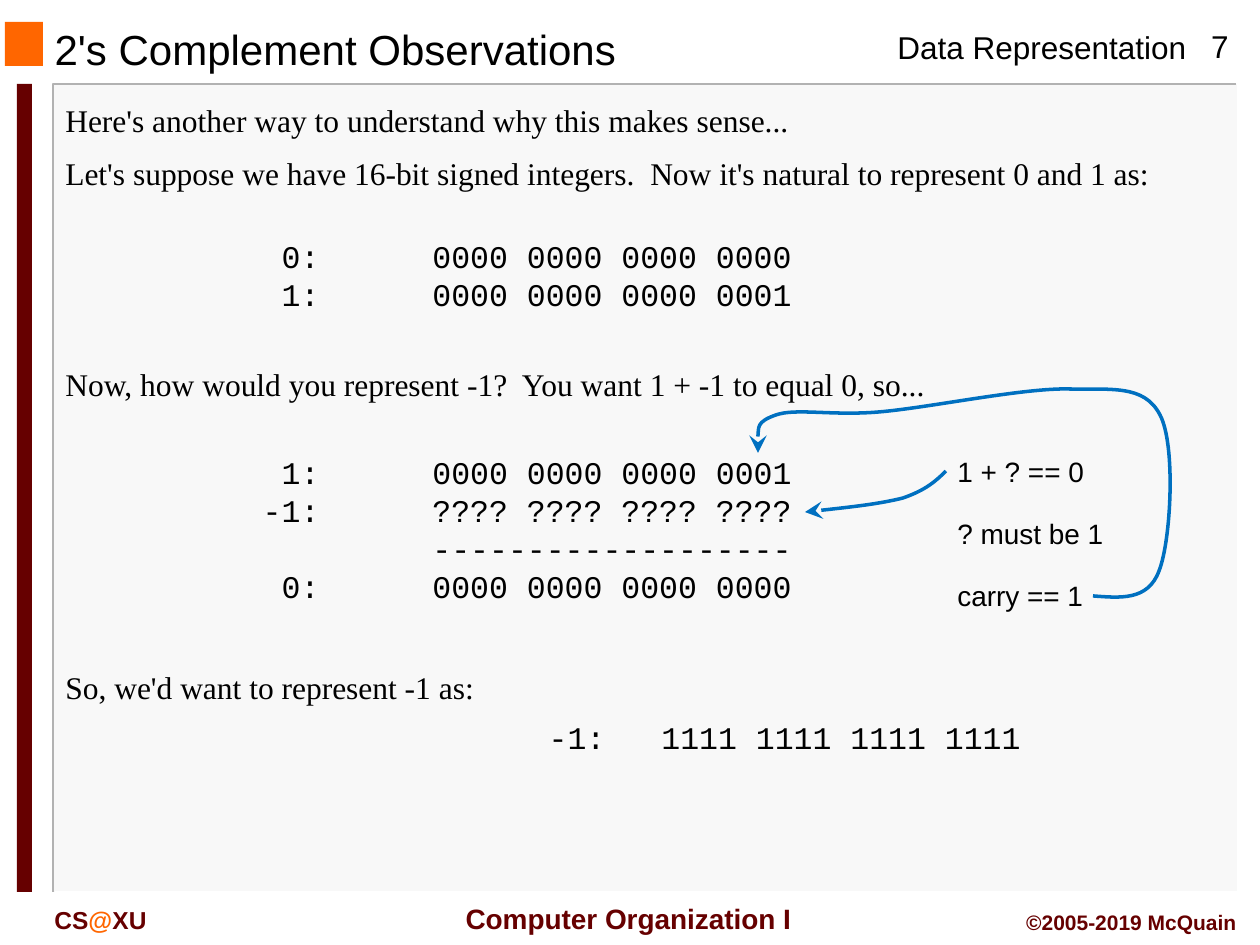
from lxml.etree import SubElement
from pptx import Presentation
from pptx.dml.color import RGBColor
from pptx.enum.shapes import MSO_SHAPE
from pptx.enum.text import MSO_ANCHOR, PP_ALIGN
from pptx.oxml.ns import qn
from pptx.util import Pt

PX = 914400 / 126
BLACK = RGBColor(0, 0, 0)
MAROON = RGBColor(0x66, 0, 0)
ORANGE = RGBColor(0xFF, 0x66, 0)
PANEL = RGBColor(0xF8, 0xF8, 0xF8)
GREY = RGBColor(0xB2, 0xB2, 0xB2)
WHITE = RGBColor(0xFF, 0xFF, 0xFF)
BLUE = RGBColor(0, 0x70, 0xC0)
LEFT, CENTER, RIGHT = PP_ALIGN.LEFT, PP_ALIGN.CENTER, PP_ALIGN.RIGHT

TITLE = "2's Complement Observations"
BLOCKS = [
    ((54, 84, 1184, 808), PANEL),
    ((5, 22, 38, 44), ORANGE),
    ((17, 84, 15, 808), MAROON),
]
EDGES = [
    ([(1236, 84), (53, 84), (53, 892)], GREY),
    ([(1238, 84), (1238, 892), (55, 892)], WHITE),
]
FRAME = [
    ((885, 22, 318, 51), [("Data Representation", BLACK)], 18, False, LEFT),
    ((1178, 21, 84, 51), [("7", BLACK)], 18, False, CENTER),
    ((445, 895, 367, 46), [("Computer Organization I", MAROON)], 16, True, CENTER),
    ((42, 899, 189, 42), [("CS", MAROON), ("@", ORANGE), ("XU", MAROON)], 14, True, LEFT),
    ((987, 903, 262, 38), [("©2005-2019 McQuain", MAROON)], 12, True, RIGHT),
]
PROSE = [
    (95, ["Here's another way to understand why this makes sense...",
          "Let's suppose we have 16-bit signed integers.  Now it's natural to represent 0 and 1 as:"]),
    (359, ["Now, how would you represent -1?  You want 1 + -1 to equal 0, so..."]),
    (662, ["So, we'd want to represent -1 as:"]),
]
SUMS = [
    ((231, 231, 735, 88), 76, 189, [
        ("0:", "0000 0000 0000 0000"),
        ("1:", "0000 0000 0000 0001")]),
    ((231, 447, 735, 165), 76, 189, [
        ("1:", "0000 0000 0000 0001"),
        ("-1:", "???? ???? ???? ????"),
        ("", "-------------------"),
        ("0:", "0000 0000 0000 0000")]),
    ((536, 712, 514, 51), 57, 113, [("-1:", "1111 1111 1111 1111")]),
]
NOTES = ["1 + ? == 0", "? must be 1", "carry == 1"]
NOTE_LEFT, NOTE_TOP, NOTE_STEP = 945, 448, 62
ARROWS = [
    [(946, 471), (936, 481), (926, 490), (903, 498), (879, 504), (842, 508), (805, 512)],
    [(1093, 596), (1120, 598), (1148, 601), (1159, 571), (1171, 541), (1176, 445),
     (1160, 415), (1144, 384), (1111, 390), (1065, 389), (1018, 389), (927, 408),
     (879, 412), (832, 416), (796, 408), (776, 415), (756, 422), (757, 437), (758, 453)],
]


def px(*lengths):
    return [round(length * PX) for length in lengths]


def write(paragraph, text, font, size, color=BLACK, bold=False):
    run = paragraph.add_run()
    run.text = text
    run.font.name = font
    run.font.size = Pt(size)
    run.font.bold = bold
    run.font.color.rgb = color


def text_frame(slide, area):
    frame = slide.shapes.add_textbox(*px(*area)).text_frame
    frame.word_wrap = True
    return frame


def paragraphs(frame, items):
    for index, item in enumerate(items):
        yield (frame.add_paragraph() if index else frame.paragraphs[0]), item


def add_tabs(paragraph, stops):
    tabs = SubElement(paragraph._p.get_or_add_pPr(), qn("a:tabLst"))
    for position, side in stops:
        SubElement(tabs, qn("a:tab"), pos=str(px(position)[0]), algn=side)


def add_outline(slide, points, color, width):
    points = [px(*point) for point in points]
    builder = slide.shapes.build_freeform(*points[0])
    builder.add_line_segments(points[1:], close=False)
    outline = builder.convert_to_shape()
    outline.shadow.inherit = False
    outline.fill.background()
    outline.line.color.rgb = color
    outline.line.width = Pt(width)
    return outline


def bend(outline):
    segments = list(outline._element.iter(qn("a:lnTo")))
    for start in range(0, len(segments), 3):
        first, *others = segments[start:start + 3]
        first.tag = qn("a:cubicBezTo")
        for segment in others:
            first.append(segment[0])
            segment.getparent().remove(segment)


def main():
    deck = Presentation()
    deck.slide_width, deck.slide_height = px(1260, 945)
    slide = deck.slides.add_slide(deck.slide_layouts[5])

    for area, color in BLOCKS:
        block = slide.shapes.add_shape(MSO_SHAPE.RECTANGLE, *px(*area))
        block.shadow.inherit = False
        block.fill.solid()
        block.fill.fore_color.rgb = color
        block.line.fill.background()
    for corners, color in EDGES:
        add_outline(slide, corners, color, 1)

    title = slide.shapes.title
    title.left, title.top, title.width, title.height = px(42, 25, 798, 48)
    title.text_frame.vertical_anchor = MSO_ANCHOR.MIDDLE
    heading = title.text_frame.paragraphs[0]
    heading.alignment = LEFT
    write(heading, TITLE, "Arial", 24)

    for area, parts, size, bold, alignment in FRAME:
        line = text_frame(slide, area).paragraphs[0]
        line.alignment = alignment
        for text, color in parts:
            write(line, text, "Arial", size, color, bold)

    for top, sentences in PROSE:
        frame = text_frame(slide, (53, top, 1187, 51 * len(sentences)))
        for paragraph, sentence in paragraphs(frame, sentences):
            paragraph.space_before = Pt(8.4)
            write(paragraph, sentence, "Times New Roman", 18)

    for area, label_end, bits_start, rows in SUMS:
        for paragraph, (label, bits) in paragraphs(text_frame(slide, area), rows):
            add_tabs(paragraph, [(label_end, "r"), (bits_start, "l")])
            write(paragraph, f"\t{label}\t{bits}", "Courier New", 18)

    for index, note in enumerate(NOTES):
        area = (NOTE_LEFT, NOTE_TOP + index * NOTE_STEP, 210, 47)
        write(text_frame(slide, area).paragraphs[0], note, "Arial", 16)

    for controls in ARROWS:
        arrow = add_outline(slide, controls, BLUE, 2)
        bend(arrow)
        SubElement(arrow.line._get_or_add_ln(), qn("a:tailEnd"), type="stealth", w="lg", len="lg")

    deck.save("out.pptx")


if __name__ == "__main__":
    main()
